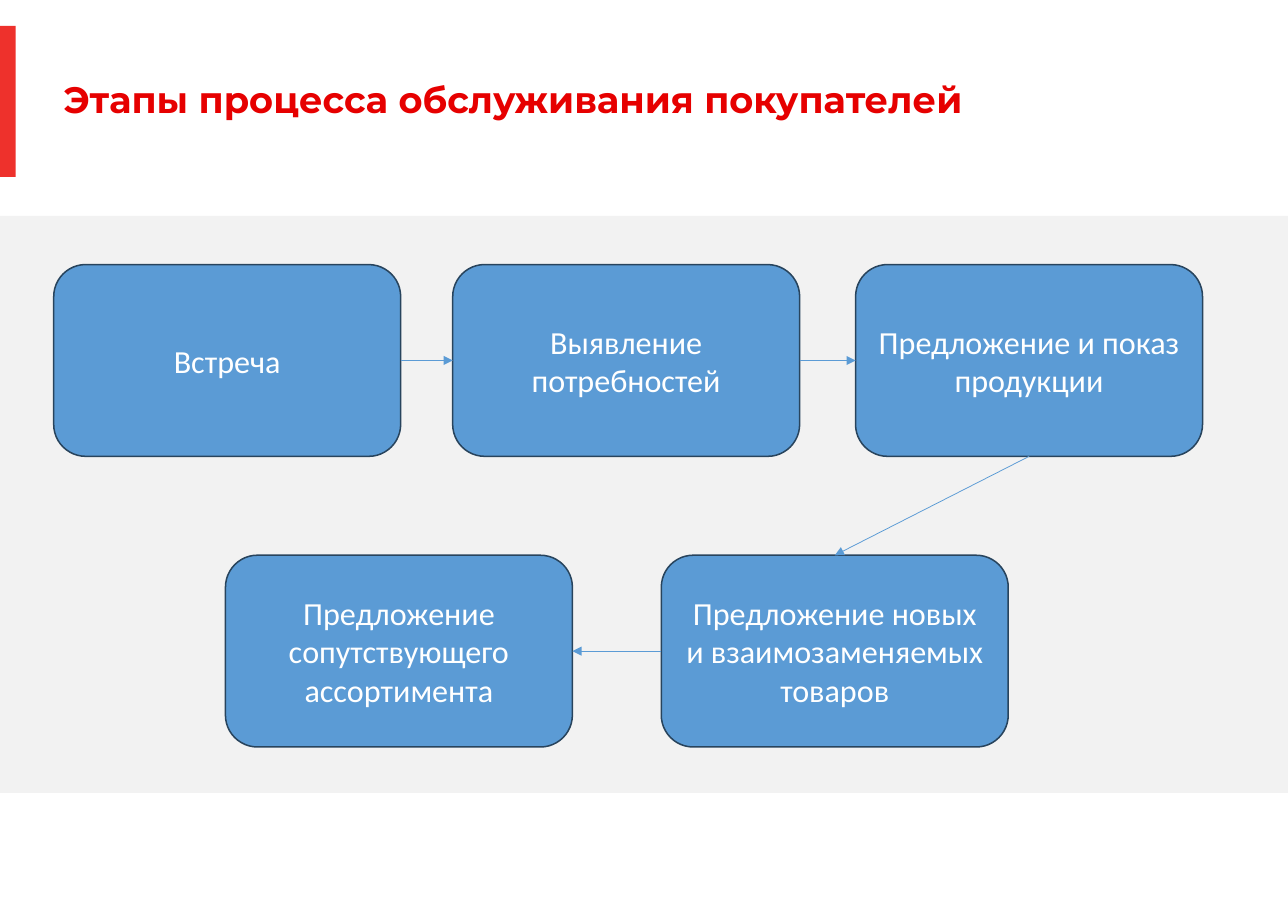
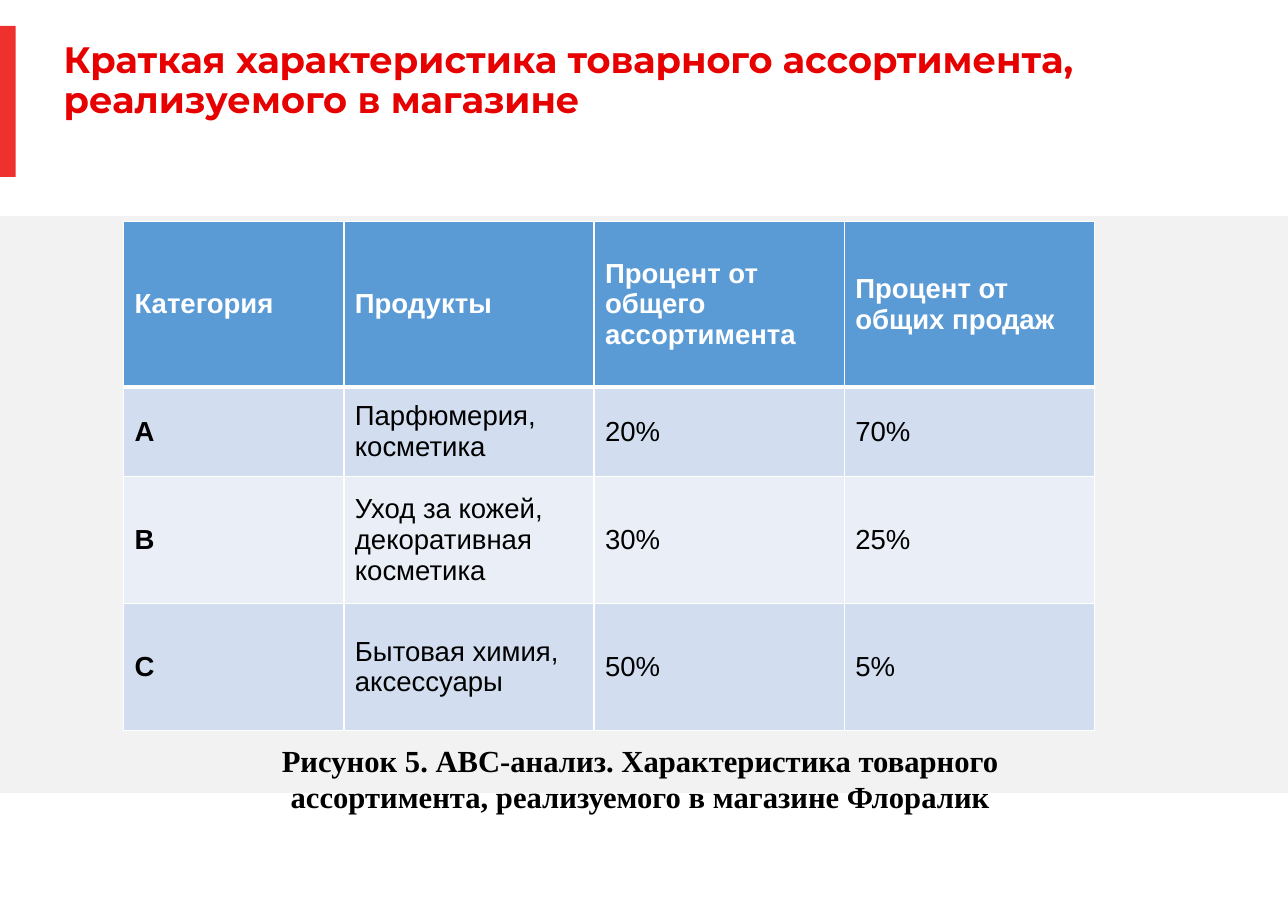
import pptx
import pptx.dml.color
import pptx.enum.shapes
import pptx.enum.text
import pptx.oxml.ns
import pptx.oxml.xmlchemy
import pptx.util

Cm = pptx.util.Cm
Pt = pptx.util.Pt
RGBColor = pptx.dml.color.RGBColor
SHAPE = pptx.enum.shapes.MSO_SHAPE
ALIGN = pptx.enum.text.PP_ALIGN
ANCHOR = pptx.enum.text.MSO_ANCHOR
qn = pptx.oxml.ns.qn
OxmlElement = pptx.oxml.xmlchemy.OxmlElement

WHITE = RGBColor(0xFF, 0xFF, 0xFF)
BLACK = RGBColor(0, 0, 0)
GREY_BAND = RGBColor(0xF2, 0xF2, 0xF2)
RED_BAR = RGBColor(0xEE, 0x31, 0x2C)
RED_TITLE = RGBColor(0xE6, 0, 0)
BLUE = RGBColor(0x5B, 0x9B, 0xD5)
BLUE_LINE = RGBColor(0x28, 0x44, 0x5D)
ROW_TINTS = [RGBColor(0xD2, 0xDE, 0xEF), RGBColor(0xEA, 0xEF, 0xF7)]


def style_font(paragraph, name, size, color, bold=False):
    paragraph.font.name = name
    paragraph.font.size = Pt(size)
    paragraph.font.color.rgb = color
    paragraph.font.bold = bold


def add_page(title_text, title_top, title_height):
    page = deck.slides.add_slide(layout)
    title = page.shapes.title
    title.left, title.top = Cm(1.47), Cm(title_top)
    title.width, title.height = Cm(26.9), Cm(title_height)
    frame = title.text_frame
    frame.auto_size = pptx.enum.text.MSO_AUTO_SIZE.NONE
    frame.word_wrap = True
    frame.vertical_anchor = ANCHOR.MIDDLE
    frame.margin_left = frame.margin_right = 0
    frame.margin_top = frame.margin_bottom = 0
    frame.text = title_text
    paragraph = frame.paragraphs[0]
    paragraph.alignment = ALIGN.LEFT
    paragraph.line_spacing = 0.9
    style_font(paragraph, "Montserrat", 24, RED_TITLE, True)
    return page


deck = pptx.Presentation()
deck.slide_width, deck.slide_height = Cm(29.7), Cm(21)
layout = deck.slide_layouts[5]

# Slide 1: service process
page = add_page("Этапы процесса обслуживания покупателей", 1.88, 0.92)

# Grey band and red bar, moved to the layout so that both slides share them
bands = [
    (4.98, 29.7, 13.3, GREY_BAND),
    (0.6, 0.36, 3.48, RED_BAR),
]
for number, (top, width, height, color) in enumerate(bands):
    band = page.shapes.add_shape(SHAPE.RECTANGLE, 0, Cm(top), Cm(width), Cm(height))
    band.shadow.inherit = False
    band.fill.solid()
    band.fill.fore_color.rgb = color
    band.line.fill.background()
    band.element.nvSpPr.cNvPr.set("id", str(101 + number))
    layout.shapes.element.insert(2 + number, band.element)

# Steps in process order
steps = [
    ("Встреча", 1.24, 6.1),
    ("Выявление потребностей", 10.44, 6.1),
    ("Предложение и показ продукции", 19.73, 6.1),
    ("Предложение новых и взаимозаменяемых товаров", 15.25, 12.8),
    ("Предложение сопутствующего ассортимента", 5.2, 12.8),
]
boxes = []
for text, left, top in steps:
    box = page.shapes.add_shape(
        SHAPE.ROUNDED_RECTANGLE, Cm(left), Cm(top), Cm(8), Cm(4.42))
    box.shadow.inherit = False
    box.fill.solid()
    box.fill.fore_color.rgb = BLUE
    box.line.color.rgb = BLUE_LINE
    box.line.width = Pt(1)
    frame = box.text_frame
    frame.word_wrap = True
    frame.vertical_anchor = ANCHOR.MIDDLE
    frame.text = text
    frame.paragraphs[0].alignment = ALIGN.CENTER
    style_font(frame.paragraphs[0], "Calibri", 21, WHITE)
    boxes.append(box)

# Arrows from each step to the next: sides 0 top, 1 left, 2 bottom, 3 right
joins = [(3, 1), (3, 1), (2, 0), (1, 3)]
for source, target, (begin_side, end_side) in zip(boxes, boxes[1:], joins):
    arrow = page.shapes.add_connector(
        pptx.enum.shapes.MSO_CONNECTOR.STRAIGHT, 0, 0, 0, 0)
    arrow.begin_connect(source, begin_side)
    arrow.end_connect(target, end_side)
    arrow.line.color.rgb = BLUE
    arrow.line.width = Pt(0.5)
    properties = arrow.element.spPr
    head = OxmlElement("a:tailEnd")
    head.set("type", "triangle")
    properties.find(qn("a:ln")).append(head)
    properties.append(OxmlElement("a:effectLst"))

# Slide 2: assortment table
page = add_page(
    "Краткая характеристика товарного ассортимента, реализуемого в магазине",
    0.96, 1.85)

rows = [
    ("Категория", "Продукты", "Процент от общего ассортимента",
     "Процент от общих продаж"),
    ("A", "Парфюмерия, косметика", "20%", "70%"),
    ("B", "Уход за кожей, декоративная косметика", "30%", "25%"),
    ("C", "Бытовая химия, аксессуары", "50%", "5%"),
]
column_widths = [5.08, 5.77, 5.77, 5.77]
row_heights = [3.81, 2.06, 2.93, 2.93]
table = page.shapes.add_table(
    len(rows), len(column_widths), Cm(2.85), Cm(5.11),
    Cm(sum(column_widths)), Cm(sum(row_heights))).table
for column, width in zip(table.columns, column_widths):
    column.width = Cm(width)
for row, height in zip(table.rows, row_heights):
    row.height = Cm(height)

for row_index, row in enumerate(rows):
    is_header = row_index == 0
    # The rule under the header is thicker than the other borders
    borders = {
        "a:lnL": 1,
        "a:lnR": 1,
        "a:lnT": 3 if row_index == 1 else 1,
        "a:lnB": 3 if is_header else 1,
    }
    for column_index, text in enumerate(row):
        cell = table.cell(row_index, column_index)
        properties = cell._tc.get_or_add_tcPr()
        for tag, points in borders.items():
            border = OxmlElement(tag)
            border.set("w", str(Pt(points)))
            fill = OxmlElement("a:solidFill")
            color = OxmlElement("a:srgbClr")
            color.set("val", str(WHITE))
            fill.append(color)
            border.append(fill)
            properties.append(border)
        cell.fill.solid()
        cell.fill.fore_color.rgb = BLUE if is_header else ROW_TINTS[(row_index - 1) % 2]
        cell.vertical_anchor = ANCHOR.MIDDLE
        cell.text = text
        style_font(cell.text_frame.paragraphs[0], "Arial", 18,
                   WHITE if is_header else BLACK, is_header or column_index == 0)

# Caption
caption = page.shapes.add_textbox(Cm(5.66), Cm(16.97), Cm(18.21), Cm(1.95))
caption.text_frame.word_wrap = True
caption.text_frame.text = (
    "Рисунок 5. ABC-анализ. Характеристика товарного ассортимента, "
    "реализуемого в магазине Флоралик")
paragraph = caption.text_frame.paragraphs[0]
paragraph.alignment = ALIGN.CENTER
style_font(paragraph, "Times New Roman", 20, BLACK, True)

deck.save("out.pptx")
